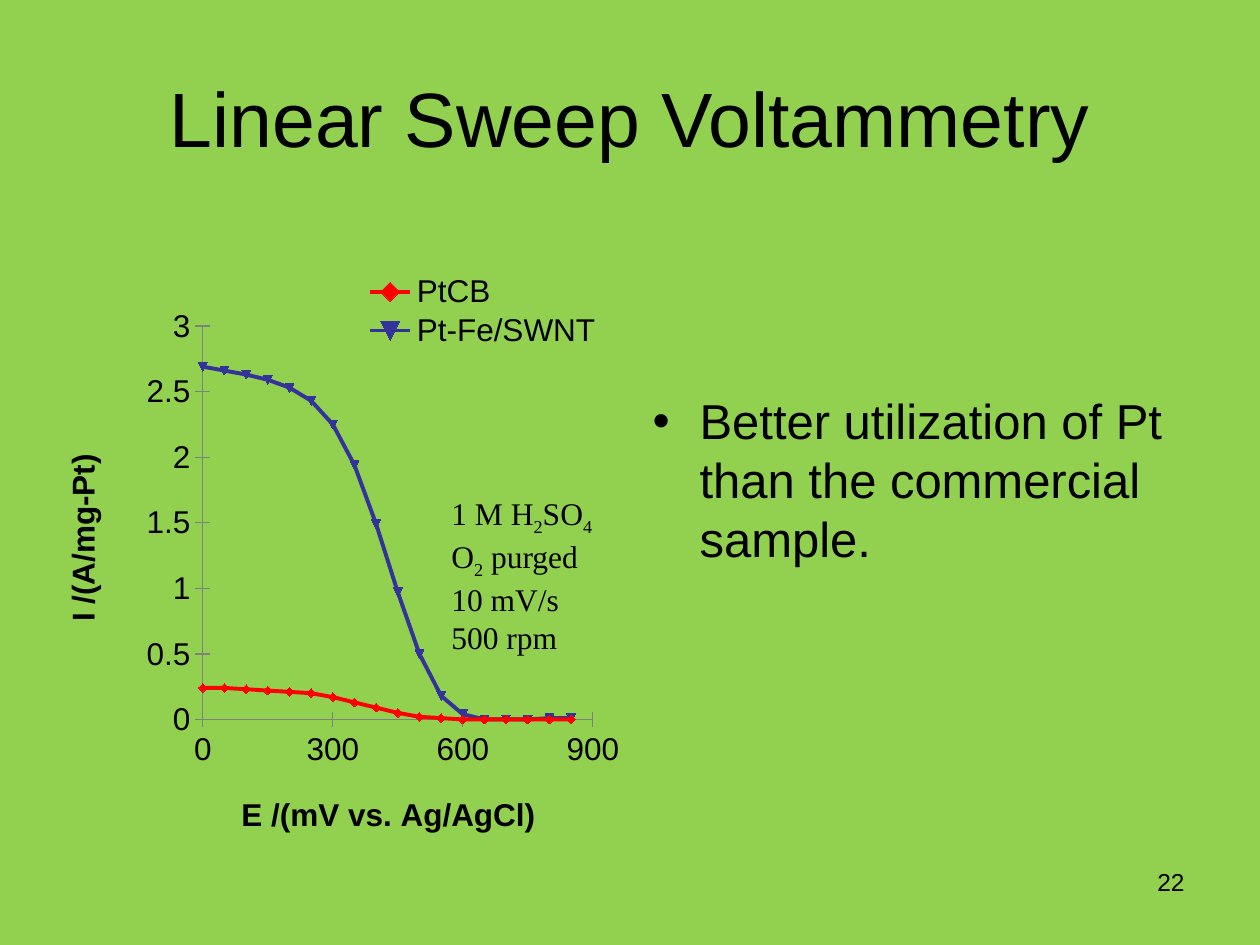
import pptx
import pptx.util
import pptx.chart.data
import pptx.dml.color
import pptx.enum.chart
import pptx.enum.text
import pptx.oxml
from pptx.util import Cm, Pt


def color(hex_text):
    return pptx.dml.color.RGBColor.from_string(hex_text)


def add_span(para, text, size=18, font="Arial", fill="000000", bold=False, baseline=0):
    span = para.add_run()
    span.text = text
    span.font.size = Pt(size)
    span.font.name = font
    span.font.bold = bold
    span.font.color.rgb = color(fill)
    if baseline:
        span._r.get_or_add_rPr().set("baseline", str(baseline * 1000))


deck = pptx.Presentation()
deck.slide_width, deck.slide_height = Cm(25.4), Cm(19.05)
page = deck.slides.add_slide(deck.slide_layouts[1])
page.background.fill.solid()
page.background.fill.fore_color.rgb = color("92D050")

# Title
title = page.shapes.title
title.left, title.top, title.width, title.height = Cm(1.27), Cm(0.76), Cm(22.86), Cm(3.18)
title.text_frame.vertical_anchor = pptx.enum.text.MSO_ANCHOR.MIDDLE
para = title.text_frame.paragraphs[0]
para.alignment = pptx.enum.text.PP_ALIGN.CENTER
add_span(para, "Linear Sweep Voltammetry", size=44)

# Bullet list
body = page.placeholders[1]
body.left, body.top, body.width, body.height = Cm(12.9), Cm(4.88), Cm(11.23), Cm(12.14)
body.text_frame.auto_size = pptx.enum.text.MSO_AUTO_SIZE.NONE
body.text_frame.margin_top = Cm(3)
para = body.text_frame.paragraphs[0]
para.space_before = Pt(0)
indent = para._p.get_or_add_pPr()
indent.set("marL", str(Cm(0.95)))
indent.set("indent", str(Cm(-0.95)))
add_span(para, "Better utilization of Pt than the commercial sample.", size=28)

# Slide number
box = page.shapes.add_textbox(Cm(18.2), Cm(17.35), Cm(5.93), Cm(1.32))
box.text_frame.word_wrap = True
para = box.text_frame.paragraphs[0]
para.alignment = pptx.enum.text.PP_ALIGN.RIGHT
add_span(para, "22", size=14)

# Chart data: current at each potential, from 850 mV down to 0
potentials = range(850, -1, -50)
series_data = [
    ("PtCB", "FF0000", [0, 0, 0, 0, 0, 0, 0.01, 0.02, 0.05, 0.09, 0.13, 0.17,
                        0.2, 0.21, 0.22, 0.23, 0.24, 0.24]),
    ("Pt-Fe/SWNT", "333399", [0.01, 0.01, 0, 0, 0, 0.04, 0.18, 0.5, 0.97, 1.49, 1.94, 2.25,
                              2.43, 2.53, 2.59, 2.63, 2.66, 2.69]),
]
data = pptx.chart.data.XyChartData()
for name, _, currents in series_data:
    series = data.add_series(name)
    for potential, current in zip(potentials, currents):
        series.add_data_point(potential, current)

chart = page.shapes.add_chart(
    pptx.enum.chart.XL_CHART_TYPE.XY_SCATTER_SMOOTH,
    Cm(0.84), Cm(4.45), Cm(11.86), Cm(12.57), data).chart
chart.has_title = False
chart.font.size = Pt(18)
chart.font.name = "Arial"
chart.font.color.rgb = color("000000")

# Curves
for series, (_, shade, _) in zip(chart.plots[0].series, series_data):
    series.smooth = True
    series.format.line.color.rgb = color(shade)
    series.format.line.width = Pt(2.25)
    series.marker.style = pptx.enum.chart.XL_MARKER_STYLE.AUTOMATIC
    series.marker.size = 5
    series.marker.format.fill.solid()
    series.marker.format.fill.fore_color.rgb = color(shade)
    series.marker.format.line.color.rgb = color(shade)

# Axes
for axis, label, top_value, step in [
        (chart.category_axis, "E /(mV vs. Ag/AgCl)", 900, 300),
        (chart.value_axis, "I /(A/mg-Pt)", 3, 0.5)]:
    axis.minimum_scale, axis.maximum_scale, axis.major_unit = 0, top_value, step
    axis.has_major_gridlines = False
    axis.major_tick_mark = pptx.enum.chart.XL_TICK_MARK.CROSS
    axis.minor_tick_mark = pptx.enum.chart.XL_TICK_MARK.NONE
    axis.tick_labels.number_format = "General"
    axis.tick_labels.number_format_is_linked = False
    axis.format.line.color.rgb = color("808080")
    axis.format.line.width = Pt(0.75)
    add_span(axis.axis_title.text_frame.paragraphs[0], label, bold=True)

# Legend
chart.has_legend = True
chart.legend.position = pptx.enum.chart.XL_LEGEND_POSITION.RIGHT
chart.legend.include_in_layout = False

# Positions of the chart parts, as fractions of the chart
namespace = "http://schemas.openxmlformats.org/drawingml/2006/chart"
tag = "{%s}" % namespace
plot_area = chart.value_axis._element.getparent()
for part, target, fractions in [
        (plot_area, '<c:layoutTarget val="inner"/>', (0.274, 0.169, 0.663, 0.631)),
        (chart.legend._element, "", (0.55, 0.08, 0.4, 0.13)),
        (chart.category_axis.axis_title._element, "", (0.33, 0.91)),
        (chart.value_axis.axis_title._element, "", (0.025, 0.365))]:
    for old in part.findall(tag + "layout"):
        part.remove(old)
    modes = "".join(f'<c:{key}Mode val="edge"/>' for key in "xy")
    values = "".join(f'<c:{key} val="{value}"/>' for key, value in zip("xywh", fractions))
    layout = pptx.oxml.parse_xml(
        f'<c:layout xmlns:c="{namespace}"><c:manualLayout>'
        f'{target}{modes}{values}</c:manualLayout></c:layout>')
    overlay = part.find(tag + "overlay")
    if overlay is None:
        part.insert(0, layout)
    else:
        overlay.addprevious(layout)

# Test conditions; every second piece is a subscript
box = page.shapes.add_textbox(Cm(9.1), Cm(9.96), Cm(3.6), Cm(3.07))
frame = box.text_frame
frame.word_wrap = True
frame.margin_left = frame.margin_top = frame.margin_right = frame.margin_bottom = 0
conditions = [["1 M H", "2", "SO", "4"], ["O", "2", " purged"], ["10 mV/s"], ["500 rpm"]]
for row, pieces in enumerate(conditions):
    para = frame.add_paragraph() if row else frame.paragraphs[0]
    for number, piece in enumerate(pieces):
        add_span(para, piece, font="Times New Roman", baseline=-25 * (number % 2))

deck.save("out.pptx")
